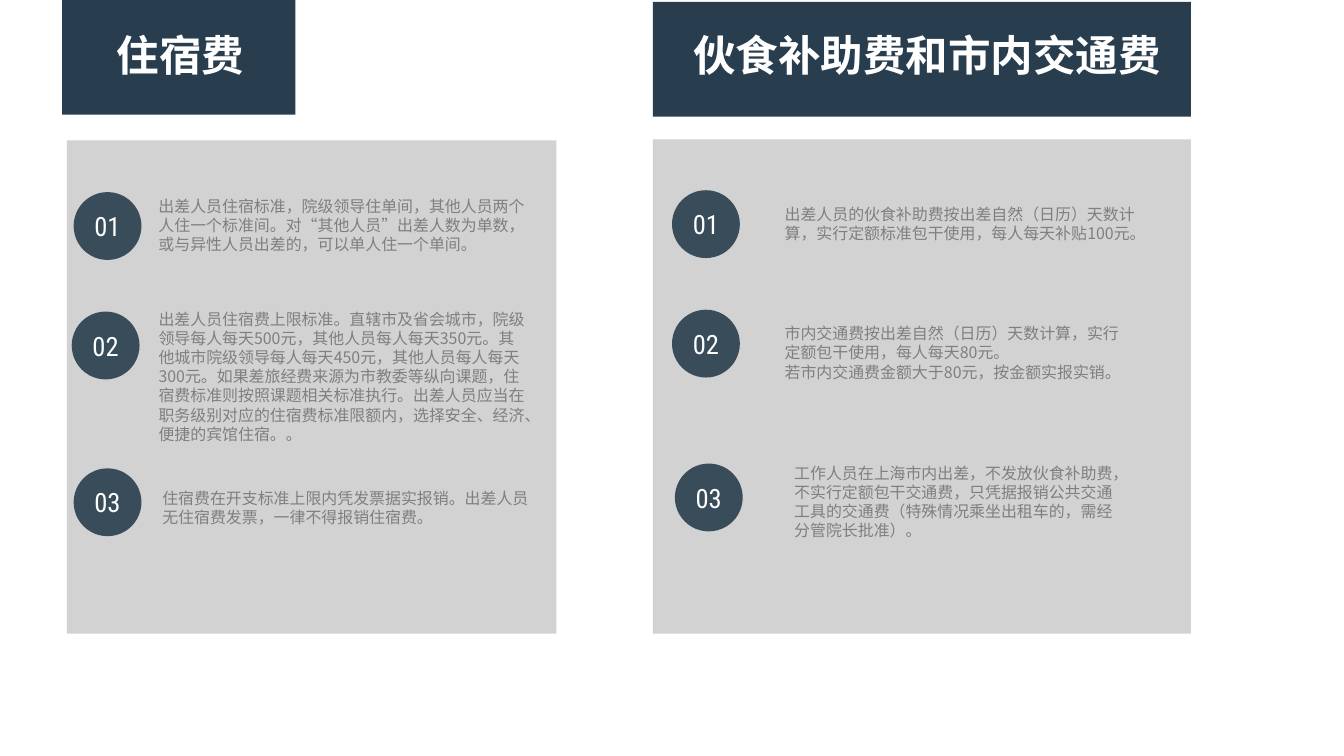
from lxml import etree
from pptx import Presentation
from pptx.dml.color import RGBColor
from pptx.enum import shapes, text
from pptx.oxml import ns
from pptx.util import Inches, Pt


class Theme:
    navy = RGBColor.from_string("283E4E")
    panel = RGBColor.from_string("BFBFBF")
    white = RGBColor.from_string("FFFFFF")
    grey = RGBColor.from_string("7F7F7F")
    font = "Noto Sans CJK SC"
    digit = "Roboto Condensed"
    head = 32
    num = 20
    body = 12


cards = [
    dict(head="住宿费", slot=0, spot=(1.12, 0.25, 1.55, 0.64),
         band=(0.65, 0, 2.44, 1.2), panel=(0.7, 1.47, 5.12, 5.16),
         items=[
             ((0.77, 2.01), (1.56, 2.01, 4.17, 0.71),
              "出差人员住宿标准，院级领导住单间，其他人员两个人住一个标准间。对“其他人员”出差人数为单数，或与异性人员出差的，可以单人住一个单间。"),
             ((0.75, 3.26), (1.56, 3.19, 4.05, 1.51),
              "出差人员住宿费上限标准。直辖市及省会城市，院级领导每人每天500元，其他人员每人每天350元。"
              "其他城市院级领导每人每天450元，其他人员每人每天300元。如果差旅经费来源为市教委等纵向课题，"
              "住宿费标准则按照课题相关标准执行。出差人员应当在职务级别对应的住宿费标准限额内，"
              "选择安全、经济、便捷的宾馆住宿。。"),
             ((0.77, 4.9), (1.6, 5.06, 4.04, 0.5),
              "住宿费在开支标准上限内凭发票据实报销。出差人员无住宿费发票，一律不得报销住宿费。"),
         ]),
    dict(head="伙食补助费和市内交通费", slot=1, spot=(7.15, 0.25, 5.14, 0.64),
         band=(6.83, 0.02, 5.63, 1.2), panel=(6.83, 1.46, 5.63, 5.17),
         items=[
             ((7.03, 1.99), (8.11, 2.09, 3.96, 0.71),
              "出差人员的伙食补助费按出差自然（日历）天数计算，实行定额标准包干使用，每人每天补贴100元。"),
             ((7.03, 3.24), (8.11, 3.34, 3.72, 0.91),
              "市内交通费按出差自然（日历）天数计算，实行定额包干使用，每人每天80元。\n"
              "若市内交通费金额大于80元，按金额实报实销。"),
             ((7.06, 4.85), (8.21, 4.8, 3.62, 0.91),
              "工作人员在上海市内出差，不发放伙食补助费，不实行定额包干交通费，"
              "只凭据报销公共交通工具的交通费（特殊情况乘坐出租车的，需经分管院长批准）。"),
         ]),
]

deck = Presentation()
deck.slide_width, deck.slide_height = Inches(14.06), Inches(7.91)
slide = deck.slides.add_slide(deck.slide_layouts[4])
slots = {s.placeholder_format.idx: s for s in slide.placeholders}


def block(kind, box, color, alpha=100):
    shape = slide.shapes.add_shape(kind, *map(Inches, box))
    shape.shadow.inherit = False
    shape.line.fill.background()
    shape.fill.solid()
    shape.fill.fore_color.rgb = color
    if alpha < 100:
        tint = shape.fill._xPr.find(".//" + ns.qn("a:srgbClr"))
        etree.SubElement(tint, ns.qn("a:alpha"), val=str(alpha * 1000))
    return shape


def write(shape, words, size, color, font, align=text.PP_ALIGN.LEFT, bold=False):
    frame = shape.text_frame
    frame.text = words
    for par in frame.paragraphs:
        par.alignment = align
        par.space_before = Pt(0)
        for run in par.runs:
            run.font.size = Pt(size)
            run.font.bold = bold
            run.font.color.rgb = color
            run.font.name = font
            etree.SubElement(run.font._element, ns.qn("a:ea"), typeface=font)
    return frame


for card in cards:
    block(shapes.MSO_SHAPE.RECTANGLE, card["panel"], Theme.panel, 70)
    block(shapes.MSO_SHAPE.RECTANGLE, card["band"], Theme.navy)

    head = slots.pop(card["slot"])
    head.left, head.top, head.width, head.height = map(Inches, card["spot"])
    slide.shapes._spTree.append(head._element)
    frame = write(head, card["head"], Theme.head, Theme.white, Theme.font, bold=True)
    frame.word_wrap = False
    frame.auto_size = text.MSO_AUTO_SIZE.SHAPE_TO_FIT_TEXT
    frame.vertical_anchor = text.MSO_ANCHOR.TOP

    for num, (spot, box, words) in enumerate(card["items"], 1):
        disc = block(shapes.MSO_SHAPE.OVAL, (*spot, 0.71, 0.71), Theme.navy, 90)
        frame = write(disc, f"{num:02}", Theme.num, Theme.white, Theme.digit,
                      text.PP_ALIGN.CENTER)
        frame.word_wrap = False
        frame.vertical_anchor = text.MSO_ANCHOR.MIDDLE

        note = slide.shapes.add_textbox(*map(Inches, box))
        frame = write(note, words, Theme.body, Theme.grey, Theme.font)
        frame.word_wrap = True
        frame.auto_size = text.MSO_AUTO_SIZE.SHAPE_TO_FIT_TEXT

for spare in slots.values():
    slide.shapes._spTree.remove(spare._element)

deck.save("out.pptx")
